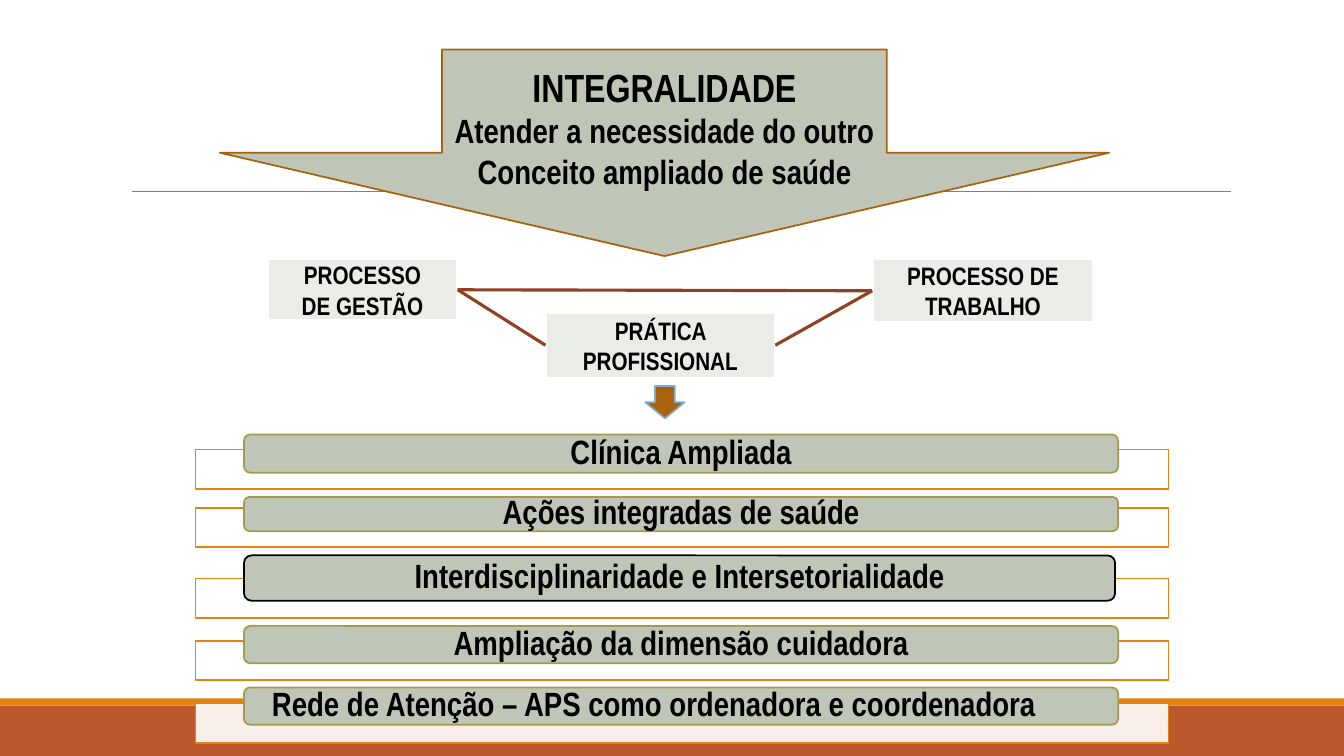
from lxml.etree import SubElement
from pptx import Presentation
from pptx.dml.color import RGBColor
from pptx.enum.shapes import MSO_CONNECTOR as LINK, MSO_SHAPE as SHAPE
from pptx.enum.text import MSO_ANCHOR as ANCHOR, PP_ALIGN as ALIGN
from pptx.oxml.ns import qn
from pptx.util import Inches, Pt

SAGE, ORANGE, OLIVE = "BFC6B8", "E48312", "A39B4E"

prs = Presentation()
prs.slide_width, prs.slide_height = Inches(13.33), Inches(7.5)
slide = prs.slides.add_slide(prs.slide_layouts[6])


def color(target, value):
    if hasattr(target, "solid"):
        target.solid()
        target.fore_color.rgb = RGBColor.from_string(value)
    else:
        target.color.rgb = RGBColor.from_string(value)


def block(kind, place, fill, outline=None, width=1.25, lines=(), align=ALIGN.CENTER):
    """Add a filled shape; lines holds (text, size) pairs, one per paragraph."""
    shape = slide.shapes.add_shape(kind, *[Inches(n) for n in place])
    shape.shadow.inherit = False
    color(shape.fill, fill)
    if outline:
        color(shape.line, outline)
        shape.line.width = Pt(width)
    else:
        shape.line.fill.background()
    frame = shape.text_frame
    frame.word_wrap, frame.vertical_anchor = True, ANCHOR.MIDDLE
    for i, (text, size) in enumerate(lines):
        paragraph = frame.paragraphs[0] if i == 0 else frame.add_paragraph()
        paragraph.alignment = align
        run = paragraph.add_run()
        run.text = text
        for key, value in {"name": "Arial Narrow", "size": Pt(size), "bold": True}.items():
            setattr(run.font, key, value)
        color(run.font, "000000")
    return shape


# Footer bands
block(SHAPE.RECTANGLE, (0, 7, 13.33, 0.5), "BD582C")
block(SHAPE.RECTANGLE, (0, 6.93, 13.33, 0.07), ORANGE)

# Title rule
rule = slide.shapes.add_connector(
    LINK.STRAIGHT, Inches(1.31), Inches(1.9), Inches(12.21), Inches(1.9))

# Three linked processes
trabalho, gestao, pratica = [
    block(SHAPE.RECTANGLE, place, "EAECE7", "FFFFFF", 2, [(text, 18) for text in texts])
    for place, texts in [
        ((8.65, 2.57, 2.2, 0.63), ["PROCESSO DE TRABALHO"]),
        ((2.65, 2.57, 1.89, 0.61), ["PROCESSO", "DE GESTÃO"]),
        ((5.41, 3.1, 2.28, 0.65), ["PRÁTICA PROFISSIONAL"]),
    ]
]
links = []
for start, end in [(gestao, pratica), (pratica, trabalho), (gestao, trabalho)]:
    link = slide.shapes.add_connector(LINK.STRAIGHT, 0, 0, 0, 0)
    link.begin_connect(start, 3)
    link.end_connect(end, 1)
    links.append(link)

# Line formats
for line, shade, width in [(rule, "808080", 0.5)] + [(link, "8E4221", 2.25) for link in links]:
    color(line.line, shade)
    line.line.width = Pt(width)
    SubElement(line._element.spPr, qn("a:effectLst"))

# Small arrow down to the list
block(SHAPE.DOWN_ARROW, (6.4, 3.83, 0.39, 0.32), "AB620D", "7EA9CA")

# List: frame top, bar top, bar width, bar height, outline, alignment, text
for frame_top, top, width, height, outline, align, text in [
    (4.46, 4.31, 8.67, 0.38, OLIVE, ALIGN.CENTER, "Clínica Ampliada"),
    (5.04, 4.93, 8.67, 0.34, OLIVE, ALIGN.CENTER, "Ações integradas de saúde"),
    (5.74, 5.51, 8.64, 0.45, "000000", ALIGN.CENTER, "Interdisciplinaridade e Intersetorialidade"),
    (6.36, 6.21, 8.67, 0.37, OLIVE, ALIGN.CENTER, "Ampliação da dimensão cuidadora"),
    (6.98, 6.82, 8.67, 0.37, OLIVE, ALIGN.LEFT, "Rede de Atenção – APS como ordenadora e coordenadora"),
]:
    frame = block(SHAPE.RECTANGLE, (1.94, frame_top, 9.65, 0.39), "FFFFFF", ORANGE)
    white = frame._element.spPr.find(qn("a:solidFill"))[0]
    SubElement(white, qn("a:alpha"), val="90000")
    bar = block(SHAPE.ROUNDED_RECTANGLE, (2.42, top, width, height), SAGE, outline,
                lines=[(text, 24)], align=align)
    bar.text_frame.paragraphs[0].line_spacing = 0.9
    for side, inset in {"left": 0.26, "right": 0.26, "top": 0, "bottom": 0}.items():
        setattr(bar.text_frame, f"margin_{side}", Inches(inset))

# Main arrow
block(SHAPE.DOWN_ARROW, (2.18, 0.49, 8.82, 2.05), SAGE, "A9610D", lines=[
    ("INTEGRALIDADE", 28),
    ("Atender a necessidade do outro", 24),
    ("Conceito ampliado de saúde", 24),
])

prs.save("out.pptx")
